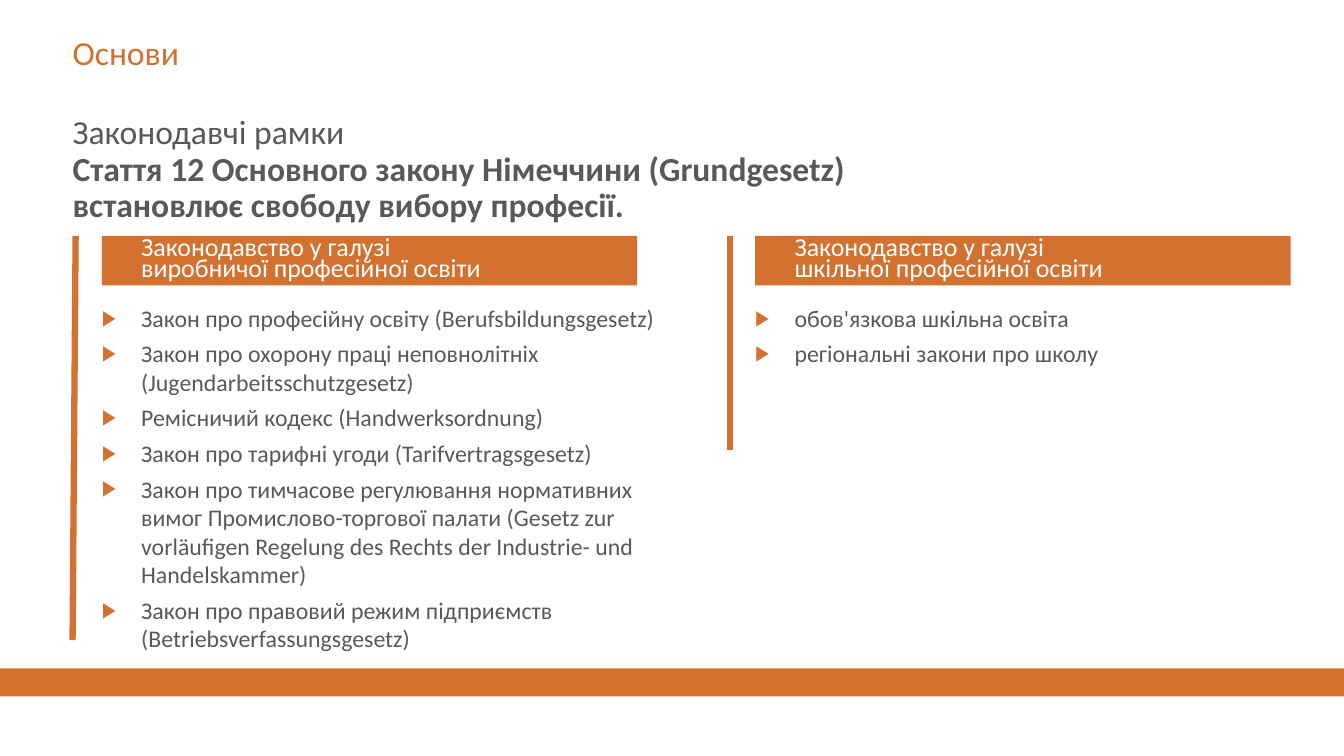
from lxml import etree
from pptx import Presentation
from pptx.dml.color import RGBColor
from pptx.enum.shapes import MSO_CONNECTOR, MSO_SHAPE
from pptx.enum.text import MSO_ANCHOR, MSO_AUTO_SIZE, PP_ALIGN
from pptx.oxml.ns import qn
from pptx.util import Inches, Pt

# Content
TITLE = "Основи"
INTRO = [  # text, bold
    ("Законодавчі рамки", False),
    ("Стаття 12 Основного закону Німеччини (Grundgesetz)", True),
    ("встановлює свободу вибору професії.", True),
]
COLUMNS = [
    {
        "left": 1.01, "list_width": 5.87,
        "heading": ["Законодавство у галузі", "виробничої професійної освіти"],
        "laws": [
            "Закон про професійну освіту (Berufsbildungsgesetz)",
            "Закон про охорону праці неповнолітніх (Jugendarbeitsschutzgesetz)",
            "Ремісничий кодекс (Handwerksordnung)",
            "Закон про тарифні угоди (Tarifvertragsgesetz)",
            "Закон про тимчасове регулювання нормативних вимог "
            "Промислово-торгової палати (Gesetz zur vorläufigen Regelung "
            "des Rechts der Industrie- und Handelskammer)",
            "Закон про правовий режим підприємств (Betriebsverfassungsgesetz)",
        ],
        "rule": (0.75, 0.72, 6.35),  # top x, bottom x, bottom y
    },
    {
        "left": 7.49, "list_width": 5.31,
        "heading": ["Законодавство у галузі", "шкільної професійної освіти"],
        "laws": ["обов'язкова шкільна освіта", "регіональні закони про школу"],
        "rule": (7.24, 7.24, 4.46),
    },
]

# Format
ORANGE = RGBColor(0xD3, 0x72, 0x30)
GREY = RGBColor(0x59, 0x59, 0x59)
WHITE = RGBColor(0xFF, 0xFF, 0xFF)
LEFT, TOP, MIDDLE = PP_ALIGN.LEFT, MSO_ANCHOR.TOP, MSO_ANCHOR.MIDDLE
NO_FIT = MSO_AUTO_SIZE.NONE
STRAIGHT, RECTANGLE = MSO_CONNECTOR.STRAIGHT, MSO_SHAPE.RECTANGLE
COMPARISON_LAYOUT = 4
COLUMN_TOP, LIST_TOP = 2.34, 3.01
HEADING_WIDTH, HEADING_HEIGHT, LIST_HEIGHT = 5.31, 0.49, 2.86
INDENT = 0.39


def apply(target, values):
    for name, value in values.items():
        setattr(target, name, value)


def place(box, left, top, width, height, inset=0, anchor=TOP):
    apply(box, {"left": Inches(left), "top": Inches(top),
                "width": Inches(width), "height": Inches(height)})
    apply(box.text_frame, {
        "word_wrap": True, "auto_size": NO_FIT, "vertical_anchor": anchor,
        "margin_left": Inches(inset), "margin_right": 0,
        "margin_top": 0, "margin_bottom": 0})
    return box.text_frame


def write(para, lines, size, color, spacing=1.0, before=0):
    """Fill one paragraph with (text, bold) lines parted by line breaks."""
    apply(para, {"alignment": LEFT, "line_spacing": spacing,
                 "space_before": Pt(before)})
    for number, (text, bold) in enumerate(lines):
        if number:
            para.add_line_break()
        span = para.add_run()
        span.text = text
        apply(span.font, {"name": "Calibri", "size": Pt(size), "bold": bold})
        span.font.color.rgb = color


def add_bullet(para):
    props = para._p.get_or_add_pPr()
    props.set("marL", str(Inches(INDENT)))
    props.set("indent", str(-Inches(INDENT)))
    color = etree.SubElement(props, qn("a:buClr"))
    etree.SubElement(color, qn("a:srgbClr"), val=str(ORANGE))
    etree.SubElement(props, qn("a:buSzPct"), val="90000")
    etree.SubElement(props, qn("a:buFont"), typeface="Arial")
    etree.SubElement(props, qn("a:buChar"), char="▶")


def paint(shape):
    shape.fill.solid()
    shape.fill.fore_color.rgb = ORANGE
    shape.line.fill.background()


def add_rule(page, top_x, bottom_x, bottom_y):
    rule = page.shapes.add_connector(
        STRAIGHT, Inches(top_x), Inches(COLUMN_TOP), Inches(bottom_x), Inches(bottom_y))
    rule.line.color.rgb = ORANGE
    rule.line.width = Pt(4.5)
    etree.SubElement(rule._element.spPr, qn("a:effectLst"))


def main():
    deck = Presentation()
    deck.slide_width, deck.slide_height = Inches(13.33), Inches(7.5)
    page = deck.slides.add_slide(deck.slide_layouts[COMPARISON_LAYOUT])
    title, *bodies = page.placeholders

    # Band at the foot
    band = page.shapes.add_shape(
        RECTANGLE, 0, Inches(6.63), deck.slide_width, Inches(0.28))
    band.shadow.inherit = False
    paint(band)

    # Title and introduction
    frame = place(title, 0.72, 0.32, 9.84, 0.49)
    write(frame.paragraphs[0], [(TITLE, False)], 24, ORANGE)
    intro = page.shapes.add_textbox(0, 0, 0, 0)
    frame = place(intro, 0.72, 1.15, 12.09, 1.1)
    write(frame.paragraphs[0], INTRO, 24, GREY, spacing=0.9)

    # Two columns: heading, list and side rule
    for column, heading, listing in zip(COLUMNS, bodies[::2], bodies[1::2]):
        frame = place(heading, column["left"], COLUMN_TOP, HEADING_WIDTH,
                      HEADING_HEIGHT, INDENT, MIDDLE)
        paint(heading)
        write(frame.paragraphs[0], [(line, False) for line in column["heading"]],
              18.5, WHITE, spacing=0.7)

        frame = place(listing, column["left"], LIST_TOP,
                      column["list_width"], LIST_HEIGHT)
        for number, law in enumerate(column["laws"]):
            para = frame.add_paragraph() if number else frame.paragraphs[0]
            add_bullet(para)
            write(para, [(law, False)], 17, GREY, before=5 if number else 0)

        add_rule(page, *column["rule"])

    deck.save("out.pptx")


if __name__ == "__main__":
    main()
